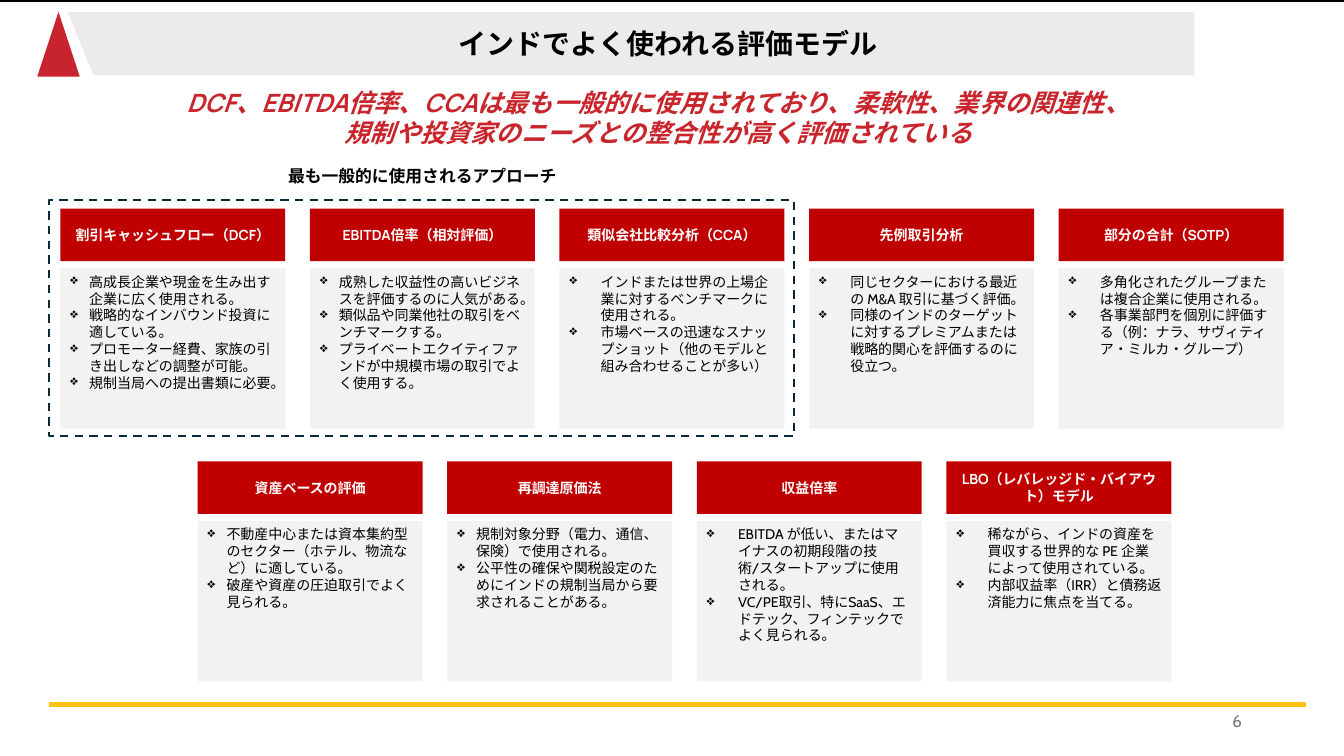
from lxml import etree
from pptx import Presentation
from pptx.dml.color import RGBColor
from pptx.enum.dml import MSO_LINE
from pptx.enum.shapes import MSO_CONNECTOR, MSO_SHAPE as SHAPE
from pptx.enum.text import MSO_ANCHOR as ANCHOR, MSO_AUTO_SIZE, PP_ALIGN as ALIGN
from pptx.oxml.ns import qn
from pptx.util import Cm, Pt

COLORS = {
    "black": "000000", "white": "FFFFFF", "band": "ECEBEA", "marker": "C7242D",
    "message": "C8252C", "header": "C00000", "card": "F2F2F2", "dash": "092A39",
    "rule": "FFC212", "number": "797979",
}
RGB = {name: RGBColor.from_string(value) for name, value in COLORS.items()}


def paint(sp, fill=None, line=None, width=0.75):
    """Set fill and outline by colour name, None meaning none, and drop the shadow."""
    sp.shadow.inherit = False
    if fill:
        sp.fill.solid()
        sp.fill.fore_color.rgb = RGB[fill]
    else:
        sp.fill.background()
    if line:
        sp.line.color.rgb = RGB[line]
        sp.line.width = Pt(width)
    else:
        sp.line.fill.background()


def write(sp, lines, color, align=ALIGN.CENTER, anchor=ANCHOR.TOP, indent=None,
          spacing=None, **font):
    """Fill a shape with one paragraph per line; an indent in cm adds bullets."""
    tf = sp.text_frame
    tf.word_wrap = True
    tf.auto_size = MSO_AUTO_SIZE.NONE
    tf.vertical_anchor = anchor
    for i, line in enumerate(lines):
        p = tf.add_paragraph() if i else tf.paragraphs[0]
        p.alignment = align
        if spacing:
            p.line_spacing = spacing
        if indent:
            pPr = p._p.get_or_add_pPr()
            pPr.set("marL", str(Cm(indent)))
            pPr.set("indent", str(-Cm(indent)))
            etree.SubElement(pPr, qn("a:buChar")).set("char", "❖")
        r = p.add_run()
        r.text = line
        for key, value in font.items():
            setattr(r.font, key, value)
        r.font.color.rgb = RGB[color]


prs = Presentation()
prs.slide_width, prs.slide_height = Cm(33.87), Cm(19.05)
s = prs.slides.add_slide(prs.slide_layouts[5])
shapes = s.shapes

# Title band, marker and rules
fb = shapes.build_freeform(Cm(30.1), Cm(0.3))
fb.add_line_segments([(Cm(x), Cm(y)) for x, y in [(1.7, 0.3), (2.36, 1.9), (30.1, 1.9)]])
paint(fb.convert_to_shape(), "band")

marker = shapes.add_shape(SHAPE.ISOSCELES_TRIANGLE, Cm(0.94), Cm(0.3), Cm(1.07), Cm(1.63))
paint(marker, "marker")

rule = shapes.add_connector(MSO_CONNECTOR.STRAIGHT, Cm(1.24), Cm(17.75), Cm(32.92), Cm(17.75))
rule.line.color.rgb = RGB["rule"]
rule.line.width = Pt(3)
etree.SubElement(rule._element.spPr, qn("a:effectLst"))

top_edge = shapes.add_shape(SHAPE.RECTANGLE, 0, 0, prs.slide_width, Cm(0.05))
paint(top_edge, "black", "black")

title = shapes.title
title.left, title.top, title.width, title.height = Cm(6.02), Cm(0.74), Cm(21.62), Cm(0.81)
tf = title.text_frame
tf.margin_left = tf.margin_top = tf.margin_right = tf.margin_bottom = 0
write(title, ["インドでよく使われる評価モデル"], "black", anchor=ANCHOR.MIDDLE, spacing=0.9,
      name="Manrope", size=Pt(20), bold=True)
shapes.element.append(title.element)  # in front of the band

# Valuation model cards
CARD_W, PITCH = 5.67, 6.29
HEADER_H, BODY_H, BODY_OFFSET = 1.32, 4.04, 1.5
CARD_ROWS = [
    (1.52, 5.26, [
        ("割引キャッシュフロー（DCF）", [
            "高成長企業や現金を生み出す企業に広く使用される。",
            "戦略的なインバウンド投資に適している。",
            "プロモーター経費、家族の引き出しなどの調整が可能。",
            "規制当局への提出書類に必要。"]),
        ("EBITDA倍率（相対評価）", [
            "成熟した収益性の高いビジネスを評価するのに人気がある。",
            "類似品や同業他社の取引をベンチマークする。",
            "プライベートエクイティファンドが中規模市場の取引でよく使用する。"]),
        ("類似会社比較分析（CCA）", [
            "インドまたは世界の上場企業に対するベンチマークに使用される。",
            "市場ベースの迅速なスナップショット（他のモデルと組み合わせることが多い）"]),
        ("先例取引分析", [
            "同じセクターにおける最近の M&A 取引に基づく評価。",
            "同様のインドのターゲットに対するプレミアムまたは戦略的関心を評価するのに役立つ。"]),
        ("部分の合計（SOTP）", [
            "多角化されたグループまたは複合企業に使用される。",
            "各事業部門を個別に評価する（例：ナラ、サヴィティア・ミルカ・グループ）"]),
    ]),
    (4.98, 11.63, [
        ("資産ベースの評価", [
            "不動産中心または資本集約型のセクター（ホテル、物流など）に適している。",
            "破産や資産の圧迫取引でよく見られる。"]),
        ("再調達原価法", [
            "規制対象分野（電力、通信、保険）で使用される。",
            "公平性の確保や関税設定のためにインドの規制当局から要求されることがある。"]),
        ("収益倍率", [
            "EBITDA が低い、またはマイナスの初期段階の技術/スタートアップに使用される。",
            "VC/PE取引、特にSaaS、エドテック、フィンテックでよく見られる。"]),
        ("LBO（レバレッジド・バイアウト）モデル", [
            "稀ながら、インドの資産を買収する世界的な PE 企業によって使用されている。",
            "内部収益率（IRR）と債務返済能力に焦点を当てる。"]),
    ]),
]
for left, top, cards in CARD_ROWS:
    for col, (heading, points) in enumerate(cards):
        x = Cm(left + col * PITCH)
        header = shapes.add_shape(SHAPE.RECTANGLE, x, Cm(top), Cm(CARD_W), Cm(HEADER_H))
        paint(header, "header")
        write(header, [heading], "white", anchor=ANCHOR.MIDDLE,
              name="Manrope", size=Pt(10), bold=True)
        body = shapes.add_shape(SHAPE.RECTANGLE, x, Cm(top + BODY_OFFSET),
                                Cm(CARD_W), Cm(BODY_H))
        paint(body, "card")
        write(body, points, "black", ALIGN.LEFT, indent=0.48 if col < 2 else 0.79,
              name="Cabin", size=Pt(10))

# Frame around the most common approaches
frame = shapes.add_shape(SHAPE.RECTANGLE, Cm(1.24), Cm(5.05), Cm(18.77), Cm(5.94))
paint(frame, line="dash", width=1.5)
frame.line.dash_style = MSO_LINE.DASH

message = shapes.add_textbox(Cm(0.76), Cm(2.08), Cm(31.67), Cm(1.04))
write(message, ["DCF、EBITDA倍率、CCAは最も一般的に使用されており、柔軟性、業界の関連性、",
                "規制や投資家のニーズとの整合性が高く評価されている"],
      "message", name="Manrope", size=Pt(18), bold=True, italic=True)

frame_label = shapes.add_textbox(Cm(1.68), Cm(4.11), Cm(17.93), Cm(0.91))
write(frame_label, ["最も一般的に使用されるアプローチ"], "black", spacing=0.9,
      name="Manrope", size=Pt(12), bold=True)

page_number = shapes.add_textbox(Cm(23.93), Cm(17.65), Cm(7.62), Cm(1.02))
write(page_number, ["6"], "number", ALIGN.RIGHT, ANCHOR.MIDDLE, name="Cabin", size=Pt(12))

prs.save("out.pptx")
